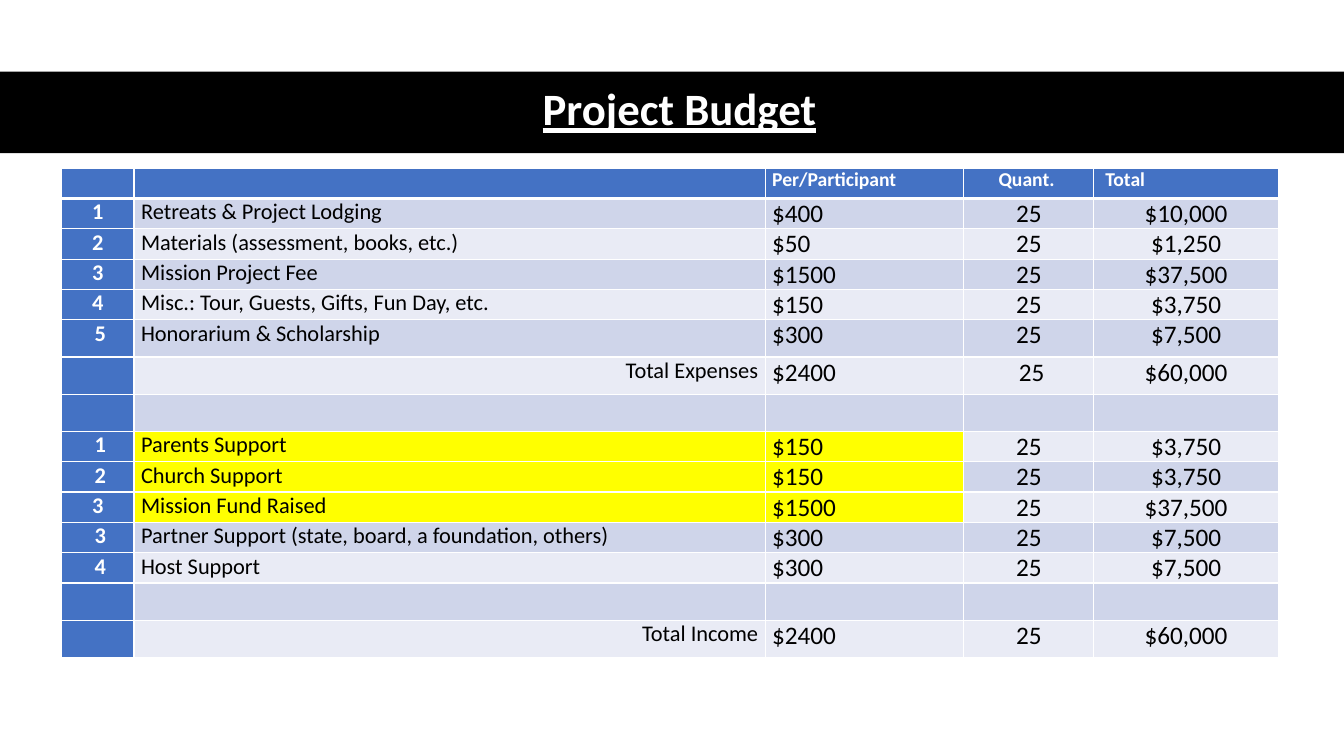
"""Build the project budget slide."""
from lxml import etree
from pptx import Presentation
from pptx import util as u
from pptx.dml.color import RGBColor
from pptx.enum import shapes, text
from pptx.oxml.ns import qn

FONT = "Calibri"
TITLE = "Project Budget"
BLANK = ("", "", "", "", "")
ROWS = [
    ("", "", "Per/Participant", "Quant. ", " Total"),
    ("1", "Retreats & Project Lodging", "$400", "25", "$10,000"),
    ("2", "Materials (assessment, books, etc.)", "$50", "25", "$1,250"),
    ("3", "Mission Project Fee", "$1500", "25", "$37,500"),
    ("4", "Misc.: Tour, Guests, Gifts, Fun Day, etc.", "$150", "25", "$3,750"),
    (" 5", "Honorarium & Scholarship", "$300", "25", "$7,500"),
    ("", "Total Expenses", "$2400", " 25", "$60,000"),
    BLANK,
    (" 1", "Parents Support", "$150", "25", "$3,750"),
    (" 2", "Church Support", "$150", "25", "$3,750"),
    ("3", "Mission Fund Raised", "$1500", "25", "$37,500"),
    (" 3", "Partner Support (state, board, a foundation, others)", "$300", "25", "$7,500"),
    (" 4", "Host Support", "$300", "25", "$7,500"),
    BLANK,
    ("", "Total Income", "$2400", "25", "$60,000"),
]
COLS = (0.72, 6.26, 1.97, 1.29, 1.83)
TALL_ROWS = {5, 6, 7, 13, 14}
HIGHLIGHT_ROWS = {8, 9, 10}
BANDS = ("E9EBF5", "CFD5EA")
BLUE, YELLOW, WHITE, BLACK = "4472C4", "FFFF00", "FFFFFF", "000000"
LEFT, CENTER, RIGHT = text.PP_ALIGN.LEFT, text.PP_ALIGN.CENTER, text.PP_ALIGN.RIGHT


def rgb(value):
    return RGBColor.from_string(value)


def add_run(p, words, size, color, bold=False):
    r = p.add_run()
    r.text = words
    r.font.name, r.font.size, r.font.bold = FONT, u.Pt(size), bold
    r.font.color.rgb = rgb(color)
    return r


def cell_fill(row, col):
    if row == 0 or col == 0:
        return BLUE
    if row in HIGHLIGHT_ROWS and col < 3:
        return YELLOW
    return BANDS[row % 2]


def cell_align(row, col, words):
    if words.startswith("Total "):
        return RIGHT
    if col in (1, 2) or (row == 0 and col == 4):
        return LEFT
    return CENTER


def set_borders(cell, row):
    widths = {"L": 1, "R": 1, "T": 3 if row == 1 else 1, "B": 3 if row == 0 else 1}
    tc_pr = cell._tc.get_or_add_tcPr()
    for i, (side, width) in enumerate(widths.items()):
        ln = etree.Element(qn(f"a:ln{side}"), w=str(u.Pt(width)))
        fill = etree.SubElement(ln, qn("a:solidFill"))
        etree.SubElement(fill, qn("a:srgbClr"), val=WHITE)
        tc_pr.insert(i, ln)


def fill_cell(cell, row, col, words):
    cell.margin_left = cell.margin_right = u.Inches(0.07)
    cell.margin_top = cell.margin_bottom = 0
    cell.fill.solid()
    cell.fill.fore_color.rgb = rgb(cell_fill(row, col))
    set_borders(cell, row)
    if words:
        p = cell.text_frame.paragraphs[0]
        p.alignment = cell_align(row, col, words)
        size = 14 if row == 0 else 16 if col < 2 else 18
        head = row == 0 or col == 0
        add_run(p, words, size, WHITE if head else BLACK, head)


def add_title(s, width):
    band = s.shapes.add_shape(shapes.MSO_SHAPE.RECTANGLE, 0, u.Inches(0.71), width, u.Inches(0.81))
    band.shadow.inherit = False
    band.fill.solid()
    band.fill.fore_color.rgb = rgb(BLACK)
    band.line.fill.background()
    box = s.shapes.add_textbox(*map(u.Inches, (0.61, 0.7, 12.26, 0.81)))
    tf = box.text_frame
    tf.word_wrap = True
    tf.vertical_anchor = text.MSO_ANCHOR.MIDDLE
    p = tf.paragraphs[0]
    p.alignment, p.line_spacing = CENTER, 0.9
    add_run(p, TITLE, 32, WHITE, True).font.underline = True


def add_budget(s):
    heights = [0.37 if i in TALL_ROWS else 0.3 for i in range(len(ROWS))]
    frame = (0.61, 1.67, sum(COLS), sum(heights))
    table = s.shapes.add_table(len(ROWS), len(COLS), *map(u.Inches, frame)).table
    for column, width in zip(table.columns, COLS):
        column.width = u.Inches(width)
    for i, (height, values) in enumerate(zip(heights, ROWS)):
        table.rows[i].height = u.Inches(height)
        for j, words in enumerate(values):
            fill_cell(table.cell(i, j), i, j, words)


def main():
    prs = Presentation()
    prs.slide_width, prs.slide_height = u.Inches(13.33), u.Inches(7.5)
    s = prs.slides.add_slide(prs.slide_layouts[6])
    add_title(s, prs.slide_width)
    add_budget(s)
    prs.save("out.pptx")


if __name__ == "__main__":
    main()
